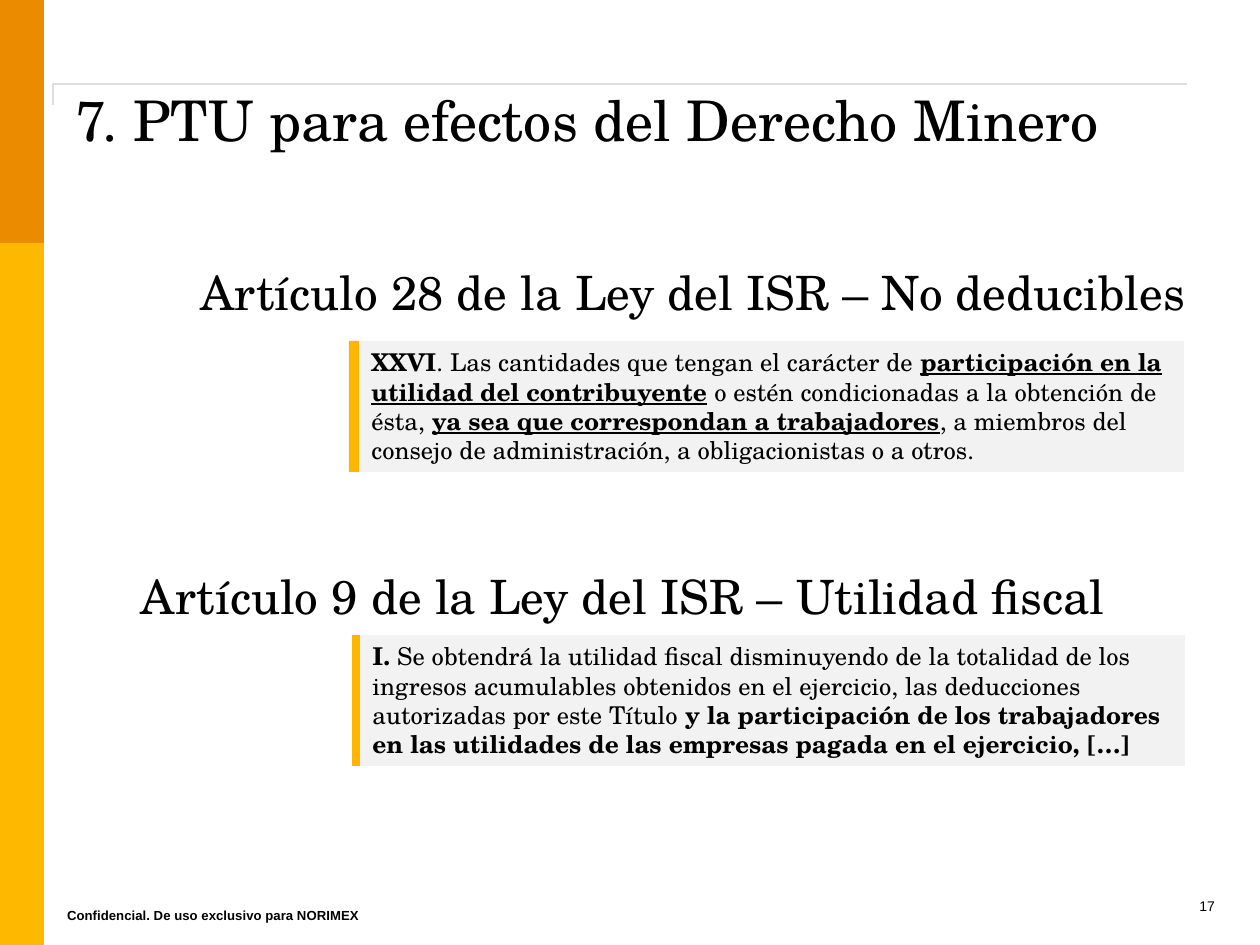
import pptx
import pptx.util
from pptx.dml.color import RGBColor
from pptx.enum.shapes import MSO_SHAPE
from pptx.enum.text import MSO_ANCHOR, PP_ALIGN

PX = 914400 / 126
SERIF = "TeX Gyre Schola"
BLACK = RGBColor(0, 0, 0)
ORANGE = RGBColor(0xEB, 0x8C, 0x00)
YELLOW = RGBColor(0xFF, 0xB8, 0x00)
AMBER = RGBColor(0xFF, 0xB6, 0x00)
PALE = RGBColor(0xF2, 0xF2, 0xF2)
RULE = RGBColor(0xDE, 0xDE, 0xDE)

prs = pptx.Presentation()
prs.slide_width = pptx.util.Inches(10)
prs.slide_height = pptx.util.Inches(7.5)
s = prs.slides.add_slide(prs.slide_layouts[5])


def add_rect(box, color):
    sp = s.shapes.add_shape(MSO_SHAPE.RECTANGLE, *[round(v * PX) for v in box])
    sp.shadow.inherit = False
    sp.fill.solid()
    sp.fill.fore_color.rgb = color
    sp.line.fill.background()
    return sp


def set_text(sp, runs, size, font=SERIF, align=PP_ALIGN.LEFT, anchor=MSO_ANCHOR.TOP, inset=True):
    tf = sp.text_frame
    tf.word_wrap = True
    tf.vertical_anchor = anchor
    if not inset:
        tf.margin_left = tf.margin_right = tf.margin_top = tf.margin_bottom = 0
    p = tf.paragraphs[0]
    p.alignment = align
    p.font.size = pptx.util.Pt(size)
    p.font.name = font
    p.font.color.rgb = BLACK
    for text, style in runs:
        r = p.add_run()
        r.text = text
        r.font.bold = "b" in style
        r.font.underline = "u" in style
    return p


fb = s.shapes.build_freeform(53, 105, scale=PX)
fb.add_line_segments([(53, 84), (1187, 84)], close=False)
sp = fb.convert_to_shape()
sp.shadow.inherit = False
sp.fill.background()
sp.line.color.rgb = RULE
sp.line.width = pptx.util.Pt(1)

add_rect((0, 243, 44, 702), YELLOW)
add_rect((0, 0, 44, 243), ORANGE)

title = s.shapes.title
title.left, title.top, title.width, title.height = [round(v * PX) for v in (75, 96, 1111, 96)]
p = set_text(title, [("7. PTU para efectos del Derecho Minero", "")], 32, inset=False)
p.line_spacing = 0.85

articles = [
    ("Artículo 28 de la Ley del ISR – No deducibles", PP_ALIGN.RIGHT,
     (120, 263, 1065, 67), (359, 341, 825, 131), 10,
     [("XXVI", "b"),
      (". Las cantidades que tengan el carácter de ", ""),
      ("participación en la utilidad del contribuyente", "bu"),
      (" o estén condicionadas a la obtención de ésta, ", ""),
      ("ya sea que correspondan a trabajadores", "bu"),
      (", a miembros del consejo de administración, a obligacionistas o a otros.", "")]),
    ("Artículo 9 de la Ley del ISR – Utilidad fiscal", PP_ALIGN.LEFT,
     (141, 567, 1045, 67), (360, 635, 825, 131), 8,
     [("I. ", "b"),
      ("Se obtendrá la utilidad fiscal disminuyendo de la totalidad de los ingresos "
       "acumulables obtenidos en el ejercicio, las deducciones autorizadas por este Título ", ""),
      ("y la participación de los trabajadores en las utilidades de las empresas "
       "pagada en el ejercicio, […]", "b")]),
]
for heading, align, heading_box, quote_box, bar, quote in articles:
    set_text(add_rect(quote_box, PALE), quote, 14)
    x, y, w, h = quote_box
    add_rect((x - bar, y, bar, h), AMBER)
    sp = s.shapes.add_textbox(*[round(v * PX) for v in heading_box])
    set_text(sp, [(heading, "")], 27, align=align, inset=False)

footers = [
    ((1032, 895, 183, 19), "17", "", 8, PP_ALIGN.RIGHT),
    ((67, 903, 725, 20), "Confidencial. De uso exclusivo para NORIMEX", "b", 7.5, PP_ALIGN.LEFT),
]
for box, text, style, size, align in footers:
    sp = s.shapes.add_textbox(*[round(v * PX) for v in box])
    set_text(sp, [(text, style)], size, "Arial", align, MSO_ANCHOR.BOTTOM, False)

prs.save("out.pptx")
